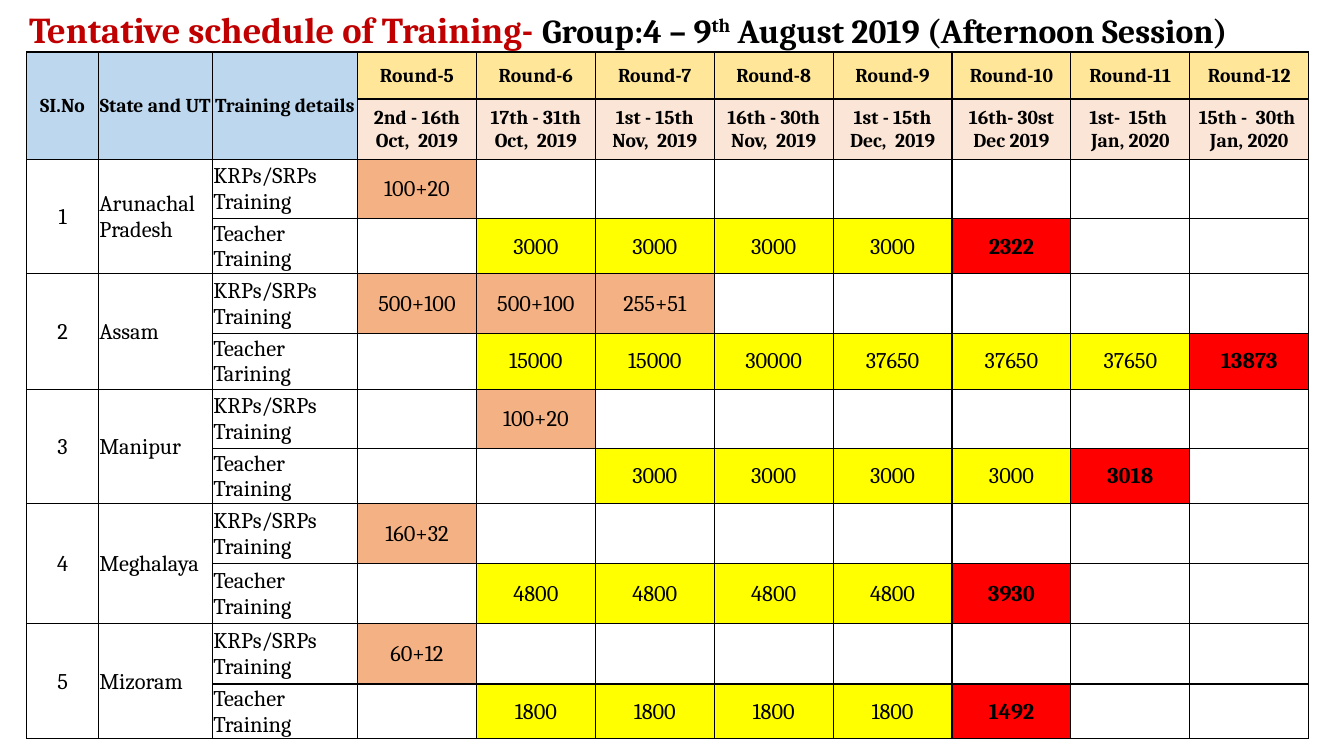
from dataclasses import dataclass

from lxml.etree import SubElement
from pptx import Presentation
from pptx.dml.color import RGBColor
from pptx.enum.text import MSO_ANCHOR, PP_ALIGN
from pptx.oxml.ns import qn
from pptx.util import Pt


@dataclass(frozen=True)
class Theme:
    font: str = "Cambria"
    ink: str = "000000"
    accent: str = "C00000"
    heading_fill: str = "BDD7EE"
    round_fill: str = "FFE699"
    date_fill: str = "FBE5D6"
    resource_fill: str = "F4B183"
    teacher_fill: str = "FFFF00"
    final_fill: str = "FF0000"
    title_size: float = 26
    subtitle_size: float = 24
    header_size: float = 14
    body_size: float = 16
    border_width: float = 1


@dataclass(frozen=True)
class Box:
    left: float
    top: float
    width: float
    height: float

    def lengths(self):
        return [Pt(value) for value in (self.left, self.top, self.width, self.height)]


@dataclass(frozen=True)
class State:
    """One state's figures; each start is a position in the list of rounds."""
    name: str
    resource_start: int
    resource: tuple
    teacher_start: int
    teacher: tuple
    teacher_label: str = "Teacher Training"


THEME = Theme()
HEADINGS = ("SI.No", "State and UT", "Training details")
ROUND_DATES = (
    "2nd - 16th Oct,  2019", "17th - 31th Oct,  2019",
    "1st - 15th Nov,  2019", "16th - 30th Nov,  2019",
    "1st - 15th Dec,  2019", "16th- 30st Dec 2019",
    "1st-  15th  Jan, 2020", "15th -  30th  Jan, 2020",
)
FIRST_ROUND = 5
STATES = (
    State("Arunachal Pradesh", 0, ("100+20",), 1, (3000, 3000, 3000, 3000, 2322)),
    State("Assam", 0, ("500+100", "500+100", "255+51"),
          1, (15000, 15000, 30000, 37650, 37650, 37650, 13873), "Teacher Tarining"),
    State("Manipur", 1, ("100+20",), 2, (3000, 3000, 3000, 3000, 3018)),
    State("Meghalaya", 0, ("160+32",), 1, (4800, 4800, 4800, 4800, 3930)),
    State("Mizoram", 0, ("60+12",), 1, (1800, 1800, 1800, 1800, 1492)),
)
HEADING_WIDTHS = (51.2, 81.4, 103.7)
HEADER_HEIGHTS = (33.6, 43)
STATE_HEIGHTS = ((42.6, 37.6), (42.6, 40), (42.6, 38.6), (43, 43), (43, 37))


def set_values(target, values):
    for name, value in values.items():
        setattr(target, name, value)


def add_run(paragraph, text, size, color=THEME.ink, bold=True):
    run = paragraph.add_run()
    run.text = text
    set_values(run.font, {"name": THEME.font, "size": Pt(size), "bold": bold})
    run.font.color.rgb = RGBColor.from_string(color)
    return run


def add_title(slide, box):
    frame = slide.shapes.add_textbox(*box.lengths()).text_frame
    set_values(frame, {"word_wrap": True, "vertical_anchor": MSO_ANCHOR.MIDDLE})
    paragraph = frame.paragraphs[0]
    paragraph.line_spacing = 0.9
    add_run(paragraph, "Tentative schedule of Training- ", THEME.title_size, THEME.accent)
    add_run(paragraph, "Group:4 – 9", THEME.subtitle_size)
    ordinal = add_run(paragraph, "th", THEME.subtitle_size)
    ordinal.font._element.set("baseline", "30000")
    add_run(paragraph, " August 2019 (Afternoon Session)", THEME.subtitle_size)


def add_borders(cell):
    properties = cell._tc.get_or_add_tcPr()
    for side in ("lnL", "lnR", "lnT", "lnB"):
        line = SubElement(properties, qn(f"a:{side}"), w=str(Pt(THEME.border_width)))
        fill = SubElement(line, qn("a:solidFill"))
        SubElement(fill, qn("a:srgbClr"), val=THEME.ink)


def format_empty_cell(cell):
    set_values(cell, {
        "margin_left": Pt(0.7), "margin_right": Pt(0.7),
        "margin_top": Pt(0.7), "margin_bottom": 0,
        "vertical_anchor": MSO_ANCHOR.MIDDLE,
    })
    add_borders(cell)
    cell.fill.background()


def write_cell(cell, text, fill=None, size=THEME.body_size, bold=False,
               alignment=PP_ALIGN.CENTER):
    paragraph = cell.text_frame.paragraphs[0]
    paragraph.alignment = alignment
    add_run(paragraph, str(text), size, bold=bold)
    if fill:
        cell.fill.solid()
        cell.fill.fore_color.rgb = RGBColor.from_string(fill)


def write_header(table):
    style = {"size": THEME.header_size, "bold": True}
    for column, heading in enumerate(HEADINGS):
        table.cell(0, column).merge(table.cell(1, column))
        write_cell(table.cell(0, column), heading, THEME.heading_fill, **style)
    for index, dates in enumerate(ROUND_DATES):
        column = len(HEADINGS) + index
        write_cell(table.cell(0, column), f"Round-{FIRST_ROUND + index}",
                   THEME.round_fill, **style)
        write_cell(table.cell(1, column), dates, THEME.date_fill, **style)


def write_state(table, number, state):
    """Fill the pair of rows that belongs to one state."""
    top = len(HEADER_HEIGHTS) + 2 * (number - 1)
    for column in (0, 1):
        table.cell(top, column).merge(table.cell(top + 1, column))
    write_cell(table.cell(top, 0), number)
    write_cell(table.cell(top, 1), state.name, alignment=PP_ALIGN.LEFT)
    for offset, label in enumerate(("KRPs/SRPs Training", state.teacher_label)):
        write_cell(table.cell(top + offset, 2), label, alignment=PP_ALIGN.LEFT)

    for column, value in enumerate(state.resource, len(HEADINGS) + state.resource_start):
        write_cell(table.cell(top, column), value, THEME.resource_fill)
    first = len(HEADINGS) + state.teacher_start
    final = first + len(state.teacher) - 1
    for column, value in enumerate(state.teacher, first):
        fill = THEME.final_fill if column == final else THEME.teacher_fill
        write_cell(table.cell(top + 1, column), value, fill, bold=column == final)


def add_schedule(slide, box):
    heights = HEADER_HEIGHTS + sum(STATE_HEIGHTS, ())
    round_width = (box.width - sum(HEADING_WIDTHS)) / len(ROUND_DATES)
    widths = HEADING_WIDTHS + (round_width,) * len(ROUND_DATES)
    table = slide.shapes.add_table(len(heights), len(widths), *box.lengths()).table
    set_values(table, {"first_row": False, "horz_banding": False})
    for column, width in zip(table.columns, widths):
        column.width = Pt(width)
    for row, height in zip(table.rows, heights):
        row.height = Pt(height)
    for cell in table.iter_cells():
        format_empty_cell(cell)
    write_header(table)
    for number, state in enumerate(STATES, 1):
        write_state(table, number, state)


def main():
    presentation = Presentation()
    set_values(presentation, {"slide_width": Pt(960), "slide_height": Pt(540)})
    slide = presentation.slides.add_slide(presentation.slide_layouts[6])
    add_title(slide, Box(13.7, 5, 938, 34.6))
    add_schedule(slide, Box(19.1, 37.2, 915.8, 486.6))
    presentation.save("out.pptx")


if __name__ == "__main__":
    main()
